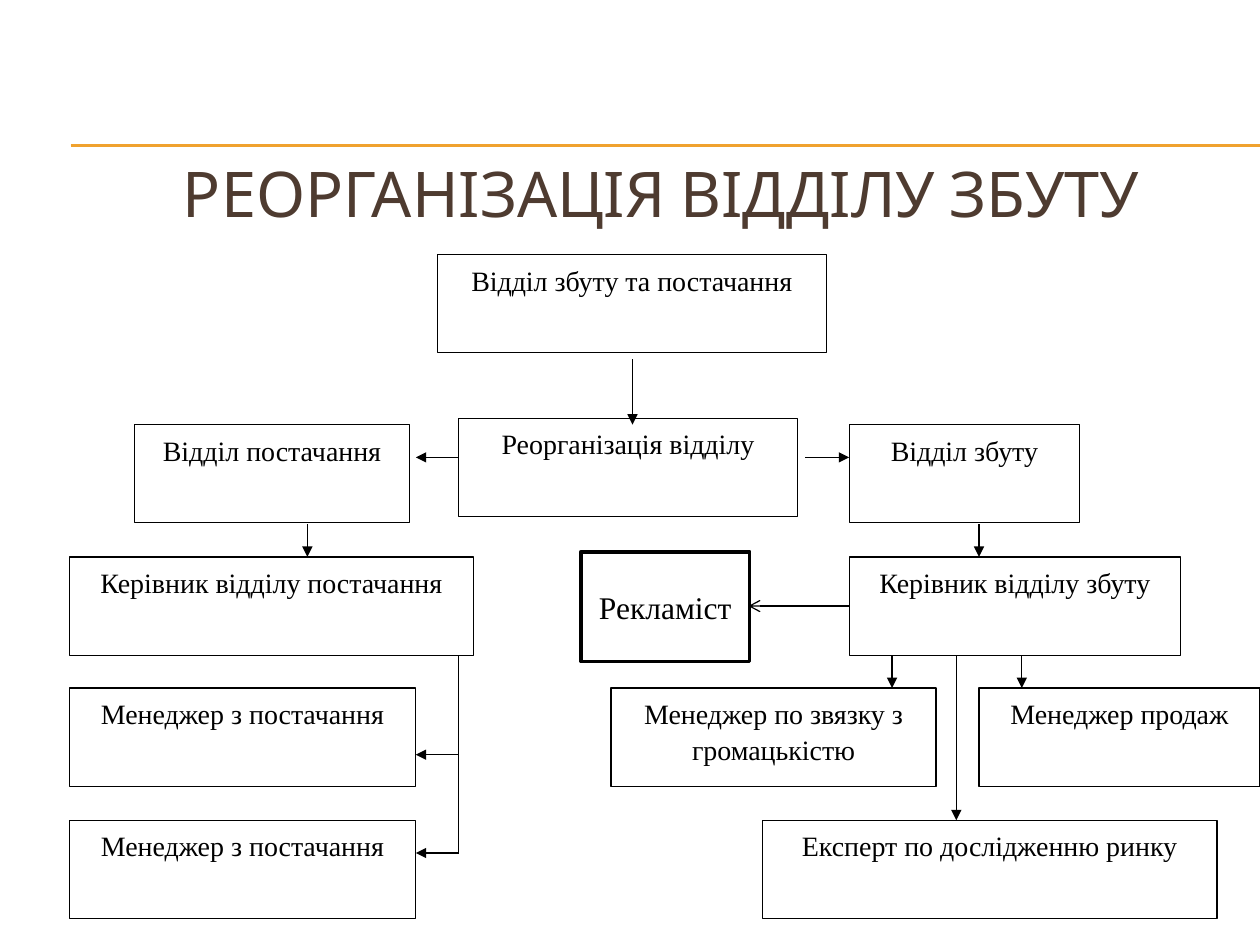
from dataclasses import dataclass
from typing import Optional

from lxml.etree import SubElement
from pptx import Presentation
from pptx.dml.color import RGBColor
from pptx.enum.shapes import MSO_CONNECTOR, MSO_SHAPE
from pptx.enum.text import MSO_ANCHOR, MSO_AUTO_SIZE, PP_ALIGN
from pptx.oxml.ns import qn
from pptx.util import Inches, Pt

COLORS = {"paper": "FFFFFF", "ink": "000000", "rule": "F0A22E", "title": "4E3B30"}
BODY_FONT = "Times New Roman"
BOX_HEIGHT = 0.78

# Tops of the chart's rows and shared horizontal positions
DEPARTMENT_ROW, HEAD_ROW, MANAGER_ROW, EXPERT_ROW = 3.37, 4.42, 5.46, 6.51
HEAD_BOTTOM = HEAD_ROW + BOX_HEIGHT
SUPPLY_LEFT, SALES_LEFT = 0.55, 6.74
TRUNK_X, SUPPLY_ARROW_X = 3.64, 3.3


@dataclass
class Box:
    label: str
    left: float
    top: float
    width: float
    height: float = BOX_HEIGHT
    border: float = 0.75
    size: int = 16
    anchor: MSO_ANCHOR = MSO_ANCHOR.TOP
    line_spacing: float = 1.07
    space_after: int = 10


@dataclass
class Link:
    x1: float
    y1: float
    x2: float
    y2: float
    head: Optional[str] = "triangle"
    color: str = "ink"


BOXES = [
    Box("Відділ збуту", SALES_LEFT, DEPARTMENT_ROW, 1.83),
    Box("Керівник відділу збуту", SALES_LEFT, HEAD_ROW, 2.63),
    Box("Менеджер продаж", 7.77, MANAGER_ROW, 2.23),
    Box("Менеджер по звязку з громацькістю", 4.85, MANAGER_ROW, 2.58),
    Box("Експерт по дослідженню ринку", 6.05, EXPERT_ROW, 3.61),
    Box("Відділ збуту та постачання", 3.47, 2.02, 3.09),
    Box("Реорганізація відділу", 3.64, 3.32, 2.69),
    Box("Відділ постачання", 1.07, DEPARTMENT_ROW, 2.18),
    Box("Керівник відділу постачання", SUPPLY_LEFT, HEAD_ROW, 3.21),
    Box("Менеджер з постачання", SUPPLY_LEFT, MANAGER_ROW, 2.75),
    Box("Менеджер з постачання", SUPPLY_LEFT, EXPERT_ROW, 2.75),
    Box("Рекламіст", 4.61, 4.38, 1.34, 0.87, border=2, size=18,
        anchor=MSO_ANCHOR.MIDDLE, line_spacing=1, space_after=0),
]

LINKS = [
    # Reorganisation into two departments
    Link(5.02, 2.85, 5.02, DEPARTMENT_ROW),
    Link(6.39, 3.63, SALES_LEFT, 3.63),
    # Supply side: arrows off one trunk
    *(Link(TRUNK_X, y, SUPPLY_ARROW_X, y) for y in (3.63, 5.99, 6.77)),
    Link(TRUNK_X, HEAD_BOTTOM, TRUNK_X, 6.77, head=None),
    # Departments to their heads
    *(Link(x, 4.16, x, HEAD_ROW) for x in (2.44, 7.77)),
    # Sales head to the staff
    *(Link(x, HEAD_BOTTOM, x, MANAGER_ROW) for x in (7.08, 8.11)),
    Link(7.59, HEAD_BOTTOM, 7.59, EXPERT_ROW),
    Link(SALES_LEFT, 4.81, 5.94, 4.81, head="arrow"),
]


def rgb(name: str) -> RGBColor:
    return RGBColor.from_string(COLORS[name])


def add_text(paragraph, text: str, font: str, size: int, color: str) -> None:
    paragraph.alignment = PP_ALIGN.CENTER
    run = paragraph.add_run()
    run.text = text
    run.font.name = font
    run.font.size = Pt(size)
    run.font.color.rgb = rgb(color)


def draw_box(slide, box: Box) -> None:
    rectangle = slide.shapes.add_shape(
        MSO_SHAPE.RECTANGLE, Inches(box.left), Inches(box.top),
        Inches(box.width), Inches(box.height))
    rectangle.shadow.inherit = False
    rectangle.fill.solid()
    rectangle.fill.fore_color.rgb = rgb("paper")
    rectangle.line.color.rgb = rgb("ink")
    rectangle.line.width = Pt(box.border)
    frame = rectangle.text_frame
    frame.word_wrap = True
    frame.vertical_anchor = box.anchor
    paragraph = frame.paragraphs[0]
    paragraph.line_spacing = box.line_spacing
    paragraph.space_after = Pt(box.space_after)
    add_text(paragraph, box.label, BODY_FONT, box.size, "ink")


def draw_link(slide, link: Link) -> None:
    connector = slide.shapes.add_connector(
        MSO_CONNECTOR.STRAIGHT, Inches(link.x1), Inches(link.y1),
        Inches(link.x2), Inches(link.y2))
    connector.line.color.rgb = rgb(link.color)
    connector.line.width = Pt(0.75)
    if link.head:
        SubElement(connector.line._get_or_add_ln(), qn("a:tailEnd"), type=link.head)
    SubElement(connector._element.spPr, qn("a:effectLst"))


def main() -> None:
    prs = Presentation()
    prs.slide_width, prs.slide_height = Inches(10), Inches(7.5)
    slide = prs.slides.add_slide(prs.slide_layouts[5])
    slide.background.fill.solid()
    slide.background.fill.fore_color.rgb = rgb("paper")

    # Double rule above the title
    for y in (1.15, 1.16):
        draw_link(slide, Link(0.56, y, 10, y, head=None, color="rule"))

    # Title
    title = slide.shapes.title
    title.left, title.top = Inches(0.5), Inches(1.07)
    title.width, title.height = Inches(9.5), Inches(0.92)
    title.text_frame.auto_size = MSO_AUTO_SIZE.NONE
    title.text_frame.vertical_anchor = MSO_ANCHOR.MIDDLE
    add_text(title.text_frame.paragraphs[0], "РЕОРГАНІЗАЦІЯ ВІДДІЛУ ЗБУТУ",
             "Karla", 36, "title")

    # Organisation chart
    for box in BOXES:
        draw_box(slide, box)
    for link in LINKS:
        draw_link(slide, link)

    prs.save("out.pptx")


if __name__ == "__main__":
    main()
